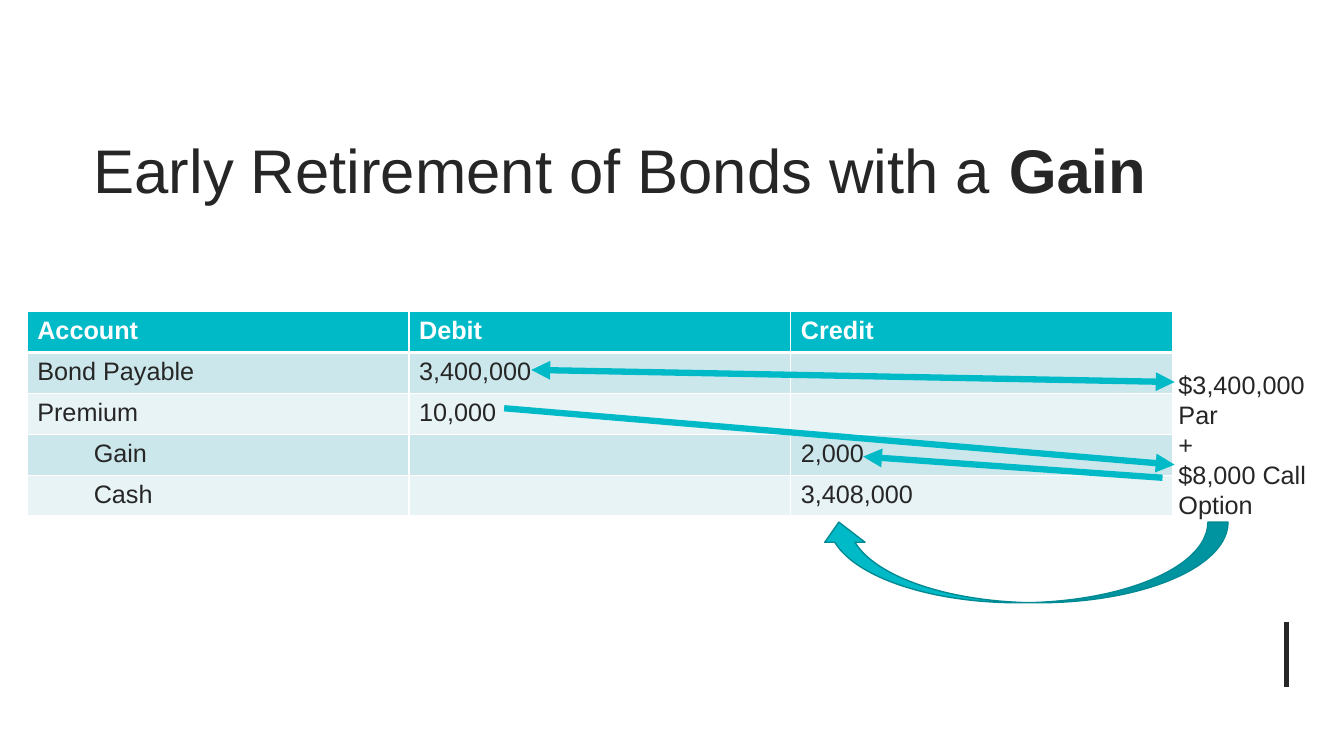
import pptx
import pptx.dml.color
import pptx.enum.shapes
import pptx.enum.text
import pptx.oxml
import pptx.oxml.ns
import pptx.util
from pptx.util import Inches

COLORS = {
    "text": "262626",
    "white": "FFFFFF",
    "accent": "00BAC8",
    "accent_dark": "008A94",
    "band_dark": "CCE7EB",
    "band_light": "E7F3F5",
}
FONT = "Arial"
JOURNAL = [
    ("Account", "Debit", "Credit"),
    ("Bond Payable", "3,400,000", ""),
    ("Premium", "10,000", ""),
    ("Gain", "", "2,000"),
    ("Cash", "", "3,408,000"),
]
CREDITED_ACCOUNTS = ("Gain", "Cash")
# Start, end, and whether the start has an arrowhead too
ARROWS = [
    ((5.27, 3.67), (11.65, 3.79), True),
    ((5, 4.05), (11.65, 4.61), False),
    ((11.53, 4.74), (8.56, 4.53), False),
]


def rgb(name):
    return pptx.dml.color.RGBColor.from_string(COLORS[name])


def style(p, size, color="text", bold=False):
    p.font.name = FONT
    p.font.size = pptx.util.Pt(size)
    p.font.color.rgb = rgb(color)
    p.font.bold = bold


def add_text_box(s, left, top, width, height):
    tf = s.shapes.add_textbox(*map(Inches, (left, top, width, height))).text_frame
    tf.word_wrap = True
    return tf


def add_title(s):
    tf = add_text_box(s, 0.83, 0.94, 11.35, 1.57)
    tf.vertical_anchor = pptx.enum.text.MSO_ANCHOR.MIDDLE
    p = tf.paragraphs[0]
    style(p, 44, bold=None)
    p.line_spacing = 0.9
    p.add_run().text = "Early Retirement of Bonds with a "
    r = p.add_run()
    r.text = "Gain"
    r.font.bold = True


def add_cell_borders(cell, widths):
    """Draw white borders; widths maps the sides L, R, T, B to points."""
    tcPr = cell._tc.get_or_add_tcPr()
    for side, width in widths.items():
        tcPr.append(pptx.oxml.parse_xml(
            f'<a:ln{side} {pptx.oxml.ns.nsdecls("a")} w="{pptx.util.Pt(width)}">'
            f'<a:solidFill><a:srgbClr val="{COLORS["white"]}"/></a:solidFill>'
            f'</a:ln{side}>'))


def add_journal(s):
    width, row_height = 11.36, 0.406
    table = s.shapes.add_table(
        len(JOURNAL), 3, Inches(0.27), Inches(3.09),
        Inches(width), Inches(row_height * len(JOURNAL))).table
    for i, entry in enumerate(JOURNAL):
        header = i == 0
        fill = "accent" if header else "band_dark" if i % 2 else "band_light"
        for j, text in enumerate(entry):
            cell = table.cell(i, j)
            cell.text = text
            style(cell.text_frame.paragraphs[0], 18,
                  "white" if header else "text", header)
            if text in CREDITED_ACCOUNTS:
                cell.margin_left = Inches(0.66)
            add_cell_borders(cell, {"L": 1, "R": 1, "T": 3 if i == 1 else 1,
                                    "B": 3 if header else 1})
            cell.fill.solid()
            cell.fill.fore_color.rgb = rgb(fill)


def add_call_price(s):
    tf = add_text_box(s, 11.59, 3.61, 1.6, 1.62)
    for i, line in enumerate(("$3,400,000", "Par", "+", "$8,000 Call Option")):
        p = tf.add_paragraph() if i else tf.paragraphs[0]
        p.text = line
        style(p, 18)


def add_line(s, start, end, color, width):
    line = s.shapes.add_connector(
        pptx.enum.shapes.MSO_CONNECTOR.STRAIGHT, *map(Inches, start + end))
    line.line.color.rgb = rgb(color)
    line.line.width = pptx.util.Pt(width)
    spPr = line._element.spPr
    spPr.append(spPr.makeelement(pptx.oxml.ns.qn("a:effectLst"), {}))
    return line


def add_arrow(s, start, end, both_ends):
    ln = add_line(s, start, end, "accent", 4.5).line._get_or_add_ln()
    for tag in ("a:headEnd", "a:tailEnd") if both_ends else ("a:tailEnd",):
        ln.append(ln.makeelement(pptx.oxml.ns.qn(tag), {"type": "triangle"}))


def add_curved_arrow(s):
    sp = s.shapes.add_shape(
        pptx.enum.shapes.MSO_SHAPE.CURVED_DOWN_ARROW,
        *map(Inches, (8.12, 5.18, 4.06, 0.8)))
    sp.rotation = 180
    sp.shadow.inherit = False
    sp.fill.solid()
    sp.fill.fore_color.rgb = rgb("accent")
    sp.line.color.rgb = rgb("accent_dark")
    sp.line.width = pptx.util.Pt(1)


def main():
    prs = pptx.Presentation()
    prs.slide_width, prs.slide_height = Inches(13.33), Inches(7.5)
    s = prs.slides.add_slide(prs.slide_layouts[6])
    add_line(s, (12.76, 6.17), (12.76, 6.82), "text", 3)
    add_title(s)
    add_journal(s)
    add_call_price(s)
    for start, end, both_ends in ARROWS:
        add_arrow(s, start, end, both_ends)
    add_curved_arrow(s)
    prs.save("out.pptx")


if __name__ == "__main__":
    main()
